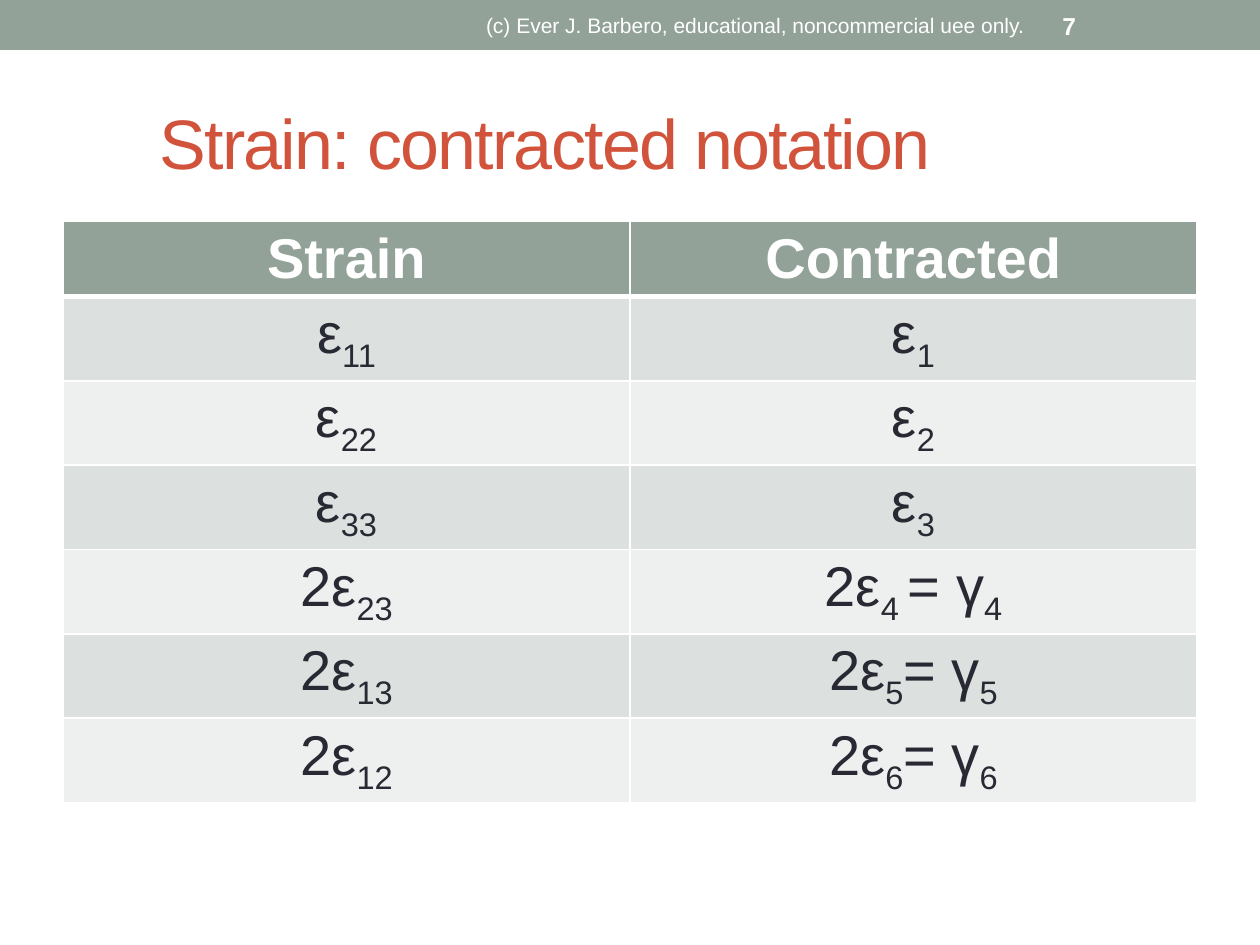
import lxml.etree
import pptx
import pptx.dml.color
import pptx.enum.shapes
import pptx.enum.text
import pptx.oxml.ns
import pptx.util

PX = 914400 // 126
GREEN, WHITE, INK, RED = "93A299", "FFFFFF", "292934", "D2533C"
BANDS = ["DCE0DE", "EEF0EF"]
ALIGN = pptx.enum.text.PP_ALIGN
MIDDLE = pptx.enum.text.MSO_ANCHOR.MIDDLE

# Text between underscores is subscript.
ROWS = [
    ("Strain", "Contracted"),
    ("ε_11_", "ε_1_"),
    ("ε_22_", "ε_2_"),
    ("ε_33_", "ε_3_"),
    ("2ε_23_", "2ε_4 _= γ_4_"),
    ("2ε_13_", "2ε_5_= γ_5_"),
    ("2ε_12_", "2ε_6_= γ_6_"),
]


def rgb(color):
    return pptx.dml.color.RGBColor.from_string(color)


def add_run(paragraph, text, size, color, bold=False):
    run = paragraph.add_run()
    run.text = text
    run.font.name = "Arial"
    run.font.size = pptx.util.Pt(size)
    run.font.bold = bold
    run.font.color.rgb = rgb(color)
    return run


presentation = pptx.Presentation()
presentation.slide_width = pptx.util.Inches(10)
presentation.slide_height = pptx.util.Inches(7.5)
slide = presentation.slides.add_slide(presentation.slide_layouts[5])

# Top band
band = slide.shapes.add_shape(
    pptx.enum.shapes.MSO_SHAPE.RECTANGLE, 0, 0, presentation.slide_width, 50 * PX)
band.shadow.inherit = False
band.fill.solid()
band.fill.fore_color.rgb = rgb(GREEN)
band.line.fill.background()

# Title
title = slide.shapes.title
title.left, title.top, title.width, title.height = 147 * PX, 73 * PX, 987 * PX, 136 * PX
title.text_frame.auto_size = pptx.enum.text.MSO_AUTO_SIZE.NONE
title.text_frame.vertical_anchor = MIDDLE
paragraph = title.text_frame.paragraphs[0]
paragraph.alignment = ALIGN.LEFT
run = add_run(paragraph, "Strain: contracted notation", 40, RED)
run._r.get_or_add_rPr().set("spc", "-100")

# Table
table_frame = slide.shapes.add_table(
    len(ROWS), 2, 63 * PX, 221 * PX, 1134 * PX, 580 * PX)
table = table_frame.table
for row_index, texts in enumerate(ROWS):
    header = row_index == 0
    table.rows[row_index].height = (75 if header else 84) * PX
    for column_index, text in enumerate(texts):
        cell = table.cell(row_index, column_index)
        paragraph = cell.text_frame.paragraphs[0]
        paragraph.alignment = ALIGN.CENTER
        for part_index, part in enumerate(text.split("_")):
            if part:
                run = add_run(paragraph, part, 32, WHITE if header else INK, header)
                if part_index % 2:
                    run._r.get_or_add_rPr().set("baseline", "-25000")

        properties = cell._tc.get_or_add_tcPr()
        for side in ("lnL", "lnR", "lnT", "lnB"):
            thick = (header and side == "lnB") or (row_index == 1 and side == "lnT")
            border = lxml.etree.SubElement(
                properties, pptx.oxml.ns.qn("a:" + side),
                w=str(pptx.util.Pt(3 if thick else 1)))
            fill = lxml.etree.SubElement(border, pptx.oxml.ns.qn("a:solidFill"))
            lxml.etree.SubElement(fill, pptx.oxml.ns.qn("a:srgbClr"), val=WHITE)
        cell.fill.solid()
        cell.fill.fore_color.rgb = rgb(GREEN if header else BANDS[(row_index - 1) % 2])

# Footer and slide number in the top band
for left, width, text, size, bold, alignment in [
    (472, 567, "(c) Ever J. Barbero, educational, noncommercial uee only.",
     12, False, ALIGN.CENTER),
    (1050, 147, "7", 14, True, ALIGN.LEFT),
]:
    box = slide.shapes.add_textbox(left * PX, 3 * PX, width * PX, 45 * PX)
    box.text_frame.word_wrap = True
    box.text_frame.vertical_anchor = MIDDLE
    paragraph = box.text_frame.paragraphs[0]
    paragraph.alignment = alignment
    add_run(paragraph, text, size, WHITE, bold)

presentation.save("out.pptx")
